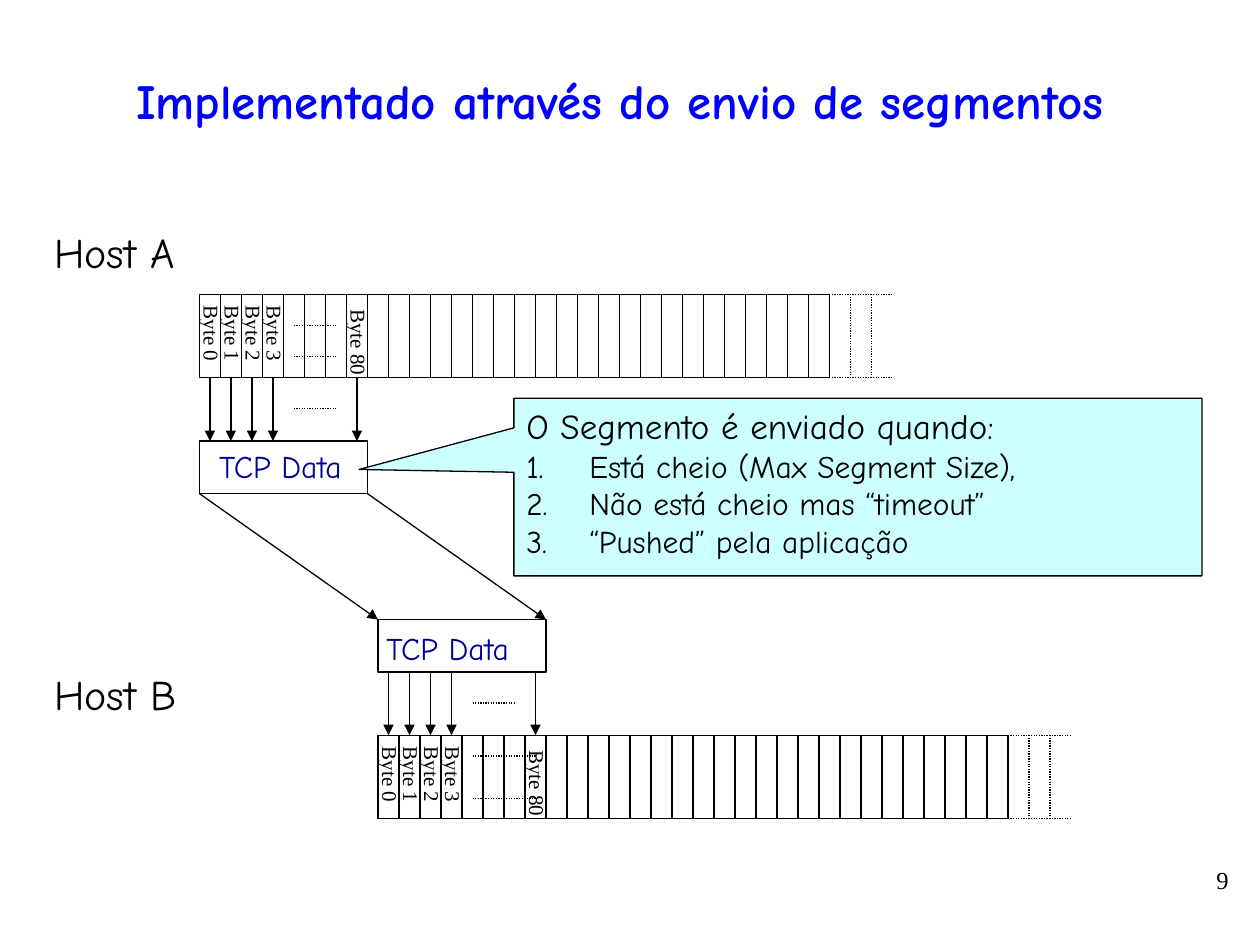
from dataclasses import dataclass
from lxml.etree import SubElement
from pptx import Presentation
from pptx.dml.color import RGBColor
from pptx.enum.dml import MSO_LINE
from pptx.enum.shapes import MSO_CONNECTOR, MSO_SHAPE
from pptx.enum.text import MSO_ANCHOR, MSO_AUTO_SIZE, PP_ALIGN
from pptx.oxml.ns import qn
from pptx.util import Cm, Pt


@dataclass
class Theme:
    ink: str = "000000"
    blue: str = "0000FF"
    navy: str = "000099"
    aqua: str = "CCFFFF"
    white: str = "FFFFFF"
    comic: str = "Comic Neue"
    roman: str = "Times New Roman"
    head: float = 28
    host: float = 24
    lead: float = 20
    body: float = 18
    page: float = 14
    byte: float = 12
    rule: float = 0.75


look = Theme()


def line(x1, y1, x2, y2, dots=False, arrow=False):
    link = slide.shapes.add_connector(
        MSO_CONNECTOR.STRAIGHT, Cm(x1), Cm(y1), Cm(x2), Cm(y2))
    link.line.color.rgb = RGBColor.from_string(look.ink)
    link.line.width = Pt(look.rule)
    if dots:
        link.line.dash_style = MSO_LINE.ROUND_DOT
    props = link.element.spPr
    if arrow:
        SubElement(props.find(qn("a:ln")), qn("a:tailEnd"), type="triangle")
    SubElement(props, qn("a:effectLst"))


def write(para, words, size, face=look.comic, color=look.ink, bold=False):
    run = para.add_run()
    run.text = words
    form = {"name": face, "size": Pt(size), "bold": bold}
    for key, value in form.items():
        setattr(run.font, key, value)
    run.font.color.rgb = RGBColor.from_string(color)


deck = Presentation()
deck.slide_width, deck.slide_height = Cm(25.4), Cm(19.05)
slide = deck.slides.add_slide(deck.slide_layouts[5])

# Title
title = slide.shapes.title
place = {"left": Cm(0.85), "top": Cm(1.06), "width": Cm(23.28), "height": Cm(1.91)}
for key, value in place.items():
    setattr(title, key, value)
frame = title.text_frame
form = {"vertical_anchor": MSO_ANCHOR.MIDDLE, "auto_size": MSO_AUTO_SIZE.NONE}
for key, value in form.items():
    setattr(frame, key, value)
frame.paragraphs[0].alignment = PP_ALIGN.CENTER
write(frame.paragraphs[0], "Implementado através do envio de segmentos",
      look.head, color=look.blue, bold=True)

# Byte streams: 30 solid cells, then three dotted ones
count, more, full = 30, 3, 8
wide, tall = 12.7, 1.68
step = wide / count
used = [0, 1, 2, 3, 7]
names = ["Byte 0", "Byte 1", "Byte 2", "Byte 3", "Byte 80"]
labels = []

# Left, top, segment top, arrow top, last dotted cell, dotted heights
hosts = [
    (4.02, 5.93, 8.89, 7.62, 6.5, (6.56, 7.19)),
    (7.62, 14.82, 12.49, 13.55, 7.5, (15.24, 16.09)),
]
deep = 1.06
for left, top, seg, start, last, rows in hosts:
    edge = left + wide
    for y in (top, top + tall):
        line(left, y, edge, y)
        line(edge + more * step, y, edge, y, dots=True)
    for i in range(count + more):
        x = left + i * step
        line(x, top, x, top + tall, dots=i > count)
    for y in rows:
        line(left + 4.5 * step, y, left + last * step, y, dots=True)

    # Segment box and the arrows between it and the stream
    box = slide.shapes.add_shape(
        MSO_SHAPE.RECTANGLE, Cm(left), Cm(seg), Cm(full * step), Cm(deep))
    box.shadow.inherit = False
    box.fill.solid()
    box.fill.fore_color.rgb = RGBColor.from_string(look.white)
    box.line.color.rgb = RGBColor.from_string(look.ink)
    box.line.width = Pt(look.rule)
    for i, name in zip(used, names):
        x = left + (i + 0.5) * step
        line(x, start, x, start + 1.27, arrow=True)
        long, drop = (1.85, 0.98) if name == "Byte 80" else (1.63, 0.8)
        labels.append((name, x + 0.04 - long / 2, top + drop - 0.38, long, 0.76,
                       90, look.byte, look.roman, look.ink))
    y = start + 0.62
    line(left + 4.5 * step, y, left + 6.5 * step, y, dots=True)

# Segment on its way from host A to host B
(ax, _, ay, *_), (bx, _, by, *_) = hosts
for x in (0, full * step):
    line(ax + x, ay + deep, bx + x, by, arrow=True)

# Free labels
labels += [
    ("Host A", 0.85, 4.45, 3.33, 1.3, 0, look.host, look.comic, look.ink),
    ("Host B", 0.85, 13.36, 3.23, 1.3, 0, look.host, look.comic, look.ink),
    ("TCP Data", 4.17, 8.89, 3.3, 1.02, 0, look.body, look.comic, look.navy),
    ("TCP Data", 7.54, 12.55, 3.3, 1.02, 0, look.body, look.comic, look.navy),
]
for words, x, y, w, h, turn, size, face, color in labels:
    box = slide.shapes.add_textbox(Cm(x), Cm(y), Cm(w), Cm(h))
    box.rotation = turn
    form = {"word_wrap": False, "auto_size": MSO_AUTO_SIZE.SHAPE_TO_FIT_TEXT}
    for key, value in form.items():
        setattr(box.text_frame, key, value)
    write(box.text_frame.paragraphs[0], words, size, face, color)

# Callout with numbered list
note = slide.shapes.add_shape(
    MSO_SHAPE.RECTANGULAR_CALLOUT, Cm(10.36), Cm(8.03), Cm(13.87), Cm(3.58))
note.adjustments[0], note.adjustments[1] = -0.725, -0.099
note.shadow.inherit = False
note.fill.solid()
note.fill.fore_color.rgb = RGBColor.from_string(look.aqua)
note.line.color.rgb = RGBColor.from_string(look.ink)
note.line.width = Pt(look.rule)
frame = note.text_frame
form = {"word_wrap": True, "vertical_anchor": MSO_ANCHOR.TOP}
for key, value in form.items():
    setattr(frame, key, value)
lines = ["O Segmento é enviado quando:", "Está cheio (Max Segment Size),",
         "Não está cheio mas “timeout”", "“Pushed” pela aplicação"]
for i, words in enumerate(lines):
    para = frame.add_paragraph() if i else frame.paragraphs[0]
    para.alignment = PP_ALIGN.LEFT
    props = para._p.get_or_add_pPr()
    for key, value in {"marL": Cm(1.27), "indent": Cm(-1.27)}.items():
        props.set(key, str(int(value)))
    if i:
        SubElement(props, qn("a:buFont"), typeface=look.comic)
        SubElement(props, qn("a:buAutoNum"), type="arabicPeriod")
    else:
        SubElement(props, qn("a:buNone"))
    write(para, words, look.body if i else look.lead)

# Page number
box = slide.shapes.add_textbox(Cm(19.1), Cm(17.32), Cm(5.92), Cm(1.32))
box.text_frame.word_wrap = True
para = box.text_frame.paragraphs[0]
para.alignment = PP_ALIGN.RIGHT
write(para, "9", look.page, look.roman)

deck.save("out.pptx")
